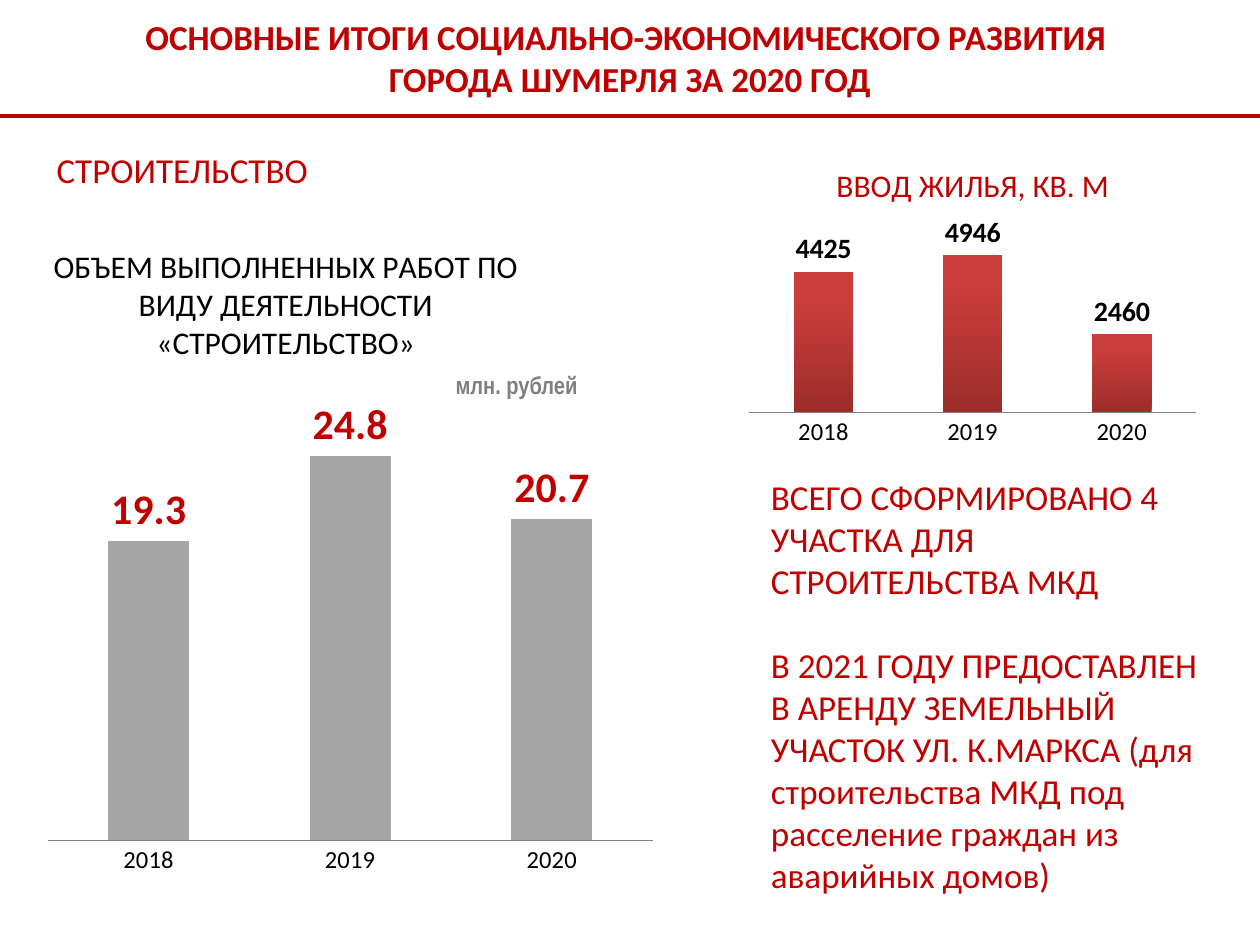
from dataclasses import dataclass

from lxml import etree
from pptx import Presentation
from pptx.chart.data import CategoryChartData
from pptx.dml.color import RGBColor
from pptx.enum.chart import XL_CHART_TYPE, XL_LABEL_POSITION, XL_TICK_MARK
from pptx.enum.shapes import MSO_CONNECTOR
from pptx.enum.text import MSO_ANCHOR, MSO_AUTO_SIZE, PP_ALIGN
from pptx.oxml.ns import qn
from pptx.util import Inches, Pt

COLUMN_CHART = XL_CHART_TYPE.COLUMN_CLUSTERED
OUTSIDE_END = XL_LABEL_POSITION.OUTSIDE_END
NO_TICKS = XL_TICK_MARK.NONE
STRAIGHT = MSO_CONNECTOR.STRAIGHT
MIDDLE = MSO_ANCHOR.MIDDLE
NO_AUTOFIT = MSO_AUTO_SIZE.NONE
LEFT, CENTER = PP_ALIGN.LEFT, PP_ALIGN.CENTER

RED, GRAY, BLACK = "C00000", "808080", "000000"
BAR_GRAY, BAR_DARK_RED, BAR_RED = "A6A6A6", "9B2D2A", "CB3D3A"
CELL = Inches(0.1)  # the page is a grid of 100 columns by 75 rows
COLUMNS, HEADER_ROWS = 100, 9.2
YEARS = ("2018", "2019", "2020")


@dataclass
class Area:
    """A place on the page, in grid columns and rows."""
    column: float
    row: float
    columns: float
    rows: float

    def lengths(self) -> list[int]:
        return [int(CELL * n) for n in (self.column, self.row, self.columns, self.rows)]


@dataclass
class TextBlock:
    area: Area
    text: str
    size: float = 20
    color: str = RED
    font: str = "Calibri"
    bold: bool = False
    align: int = LEFT
    gap: float = 0  # points between paragraphs


@dataclass
class BarChart:
    area: Area
    title: str
    title_color: str
    title_place: tuple[float, float] | None  # shares of the chart
    plot: tuple[float, float, float, float]  # shares of the chart
    name: str
    values: tuple[float, ...]
    maximum: float
    bar_colors: tuple[str, ...]  # two colours make a gradient
    label_size: float
    label_color: str
    overlap: int = 0


TITLE = TextBlock(
    Area(0, 0, COLUMNS, HEADER_ROWS),
    "ОСНОВНЫЕ ИТОГИ СОЦИАЛЬНО-ЭКОНОМИЧЕСКОГО РАЗВИТИЯ \nГОРОДА ШУМЕРЛЯ ЗА 2020 ГОД",
    bold=True, align=CENTER)

TEXTS = [
    TextBlock(Area(3.5, 9.9, 27.2, 7.1), "СТРОИТЕЛЬСТВО"),
    TextBlock(Area(33.9, 29, 14.2, 3.1), "млн. рублей", 14, GRAY, "Arial Narrow", True, CENTER),
    TextBlock(Area(60.2, 36.7, 36.2, 35.4),
              "ВСЕГО СФОРМИРОВАНО 4 УЧАСТКА ДЛЯ СТРОИТЕЛЬСТВА МКД\n"
              "В 2021 ГОДУ ПРЕДОСТАВЛЕН В АРЕНДУ ЗЕМЕЛЬНЫЙ УЧАСТОК УЛ. К.МАРКСА "
              "(для строительства МКД под расселение граждан из аварийных домов)",
              gap=24),
]

CHARTS = [
    BarChart(Area(2.8, 16.2, 50, 54.3),
             "ОБЪЕМ ВЫПОЛНЕННЫХ РАБОТ ПО ВИДУ ДЕЯТЕЛЬНОСТИ «СТРОИТЕЛЬСТВО»",
             BLACK, (0.02, 0.05), (0.02, 0.25, 0.96, 0.68),
             "Объем работ", (19.3, 24.8, 20.7), 30, (BAR_GRAY,), 24, RED),
    BarChart(Area(58.7, 11.5, 37, 24.4), "ВВОД ЖИЛЬЯ, КВ. М",
             RED, None, (0.02, 0.25, 0.96, 0.62),
             "ВВОД ЖИЛЬЯ, КВ. М", (4425, 4946, 2460), 6000,
             (BAR_DARK_RED, BAR_RED), 16, BLACK, -25),
]


def rgb(color: str) -> RGBColor:
    return RGBColor.from_string(color)


def style_font(font, size: float, color: str, bold: bool = False, name: str = "Calibri") -> None:
    font.size, font.bold, font.name = Pt(size), bold, name
    font.color.rgb = rgb(color)


def fill_text(shape, block: TextBlock) -> None:
    shape.left, shape.top, shape.width, shape.height = block.area.lengths()
    frame = shape.text_frame
    frame.text = block.text
    frame.word_wrap = True
    frame.auto_size = NO_AUTOFIT
    frame.vertical_anchor = MIDDLE
    for index, para in enumerate(frame.paragraphs):
        para.alignment = block.align
        para.space_before = Pt(block.gap if index else 0)
        for span in para.runs:
            style_font(span.font, block.size, block.color, block.bold, block.font)


def manual_layout(shares: dict[str, float], inner: bool = False):
    layout = etree.Element(qn("c:layout"))
    manual = etree.SubElement(layout, qn("c:manualLayout"))
    if inner:
        etree.SubElement(manual, qn("c:layoutTarget"), val="inner")
    for mode in ("xMode", "yMode"):
        etree.SubElement(manual, qn(f"c:{mode}"), val="edge")
    for key, share in shares.items():
        etree.SubElement(manual, qn(f"c:{key}"), val=str(share))
    return layout


def place_plot(chart, shares: tuple[float, ...]) -> None:
    plot_area = chart.element.find(".//" + qn("c:plotArea"))
    for old in plot_area.findall(qn("c:layout")):
        plot_area.remove(old)
    plot_area.insert(0, manual_layout(dict(zip("xywh", shares)), inner=True))


def place_title(chart, shares: tuple[float, float]) -> None:
    title = chart.element.find(".//" + qn("c:title"))
    for old in title.findall(qn("c:layout")):
        title.remove(old)
    title.find(qn("c:tx")).addnext(manual_layout(dict(zip("xy", shares))))


def add_bar_chart(page, spec_bars: BarChart) -> None:
    data = CategoryChartData()
    data.categories = YEARS
    data.add_series(spec_bars.name, spec_bars.values)
    chart = page.shapes.add_chart(COLUMN_CHART, *spec_bars.area.lengths(), data).chart
    style_font(chart.font, 10, BLACK)
    chart.has_legend = False

    # Title
    chart.has_title = True
    frame = chart.chart_title.text_frame
    frame.text = spec_bars.title
    style_font(frame.paragraphs[0].runs[0].font, 18, spec_bars.title_color)
    chart.chart_title.include_in_layout = False
    if spec_bars.title_place:
        place_title(chart, spec_bars.title_place)
    place_plot(chart, spec_bars.plot)

    # Axes
    values = chart.value_axis
    values.minimum_scale, values.maximum_scale = 0, spec_bars.maximum
    values.has_major_gridlines = False
    values.visible = False
    years = chart.category_axis
    years.major_tick_mark = years.minor_tick_mark = NO_TICKS
    years.format.line.color.rgb = rgb(GRAY)
    style_font(years.tick_labels.font, 14, BLACK)

    # Bars and their labels
    plot = chart.plots[0]
    plot.gap_width, plot.overlap, plot.vary_by_categories = 150, spec_bars.overlap, False
    fill = plot.series[0].format.fill
    if len(spec_bars.bar_colors) == 1:
        fill.solid()
        fill.fore_color.rgb = rgb(spec_bars.bar_colors[0])
    else:
        fill.gradient()
        fill.gradient_angle = 90
        for stop, color, position in zip(fill.gradient_stops, spec_bars.bar_colors, (0, 0.8)):
            stop.color.rgb, stop.position = rgb(color), position
    labels = plot.series[0].data_labels
    labels.show_value = True
    labels.position = OUTSIDE_END
    style_font(labels.font, spec_bars.label_size, spec_bars.label_color, True)


def main() -> None:
    deck = Presentation()
    deck.slide_width, deck.slide_height = Inches(10), Inches(7.5)
    page = deck.slides.add_slide(deck.slide_layouts[5])

    # Header with its rule
    fill_text(page.shapes.title, TITLE)
    height = int(CELL * HEADER_ROWS)
    rule = page.shapes.add_connector(STRAIGHT, 0, height, CELL * COLUMNS, height)
    rule.line.color.rgb, rule.line.width = rgb(RED), Pt(2.5)
    etree.SubElement(rule.element.spPr, qn("a:effectLst"))

    # Charts, then the texts over them
    for bars in CHARTS:
        add_bar_chart(page, bars)
    for block in TEXTS:
        fill_text(page.shapes.add_textbox(*block.area.lengths()), block)
    deck.save("out.pptx")


if __name__ == "__main__":
    main()
